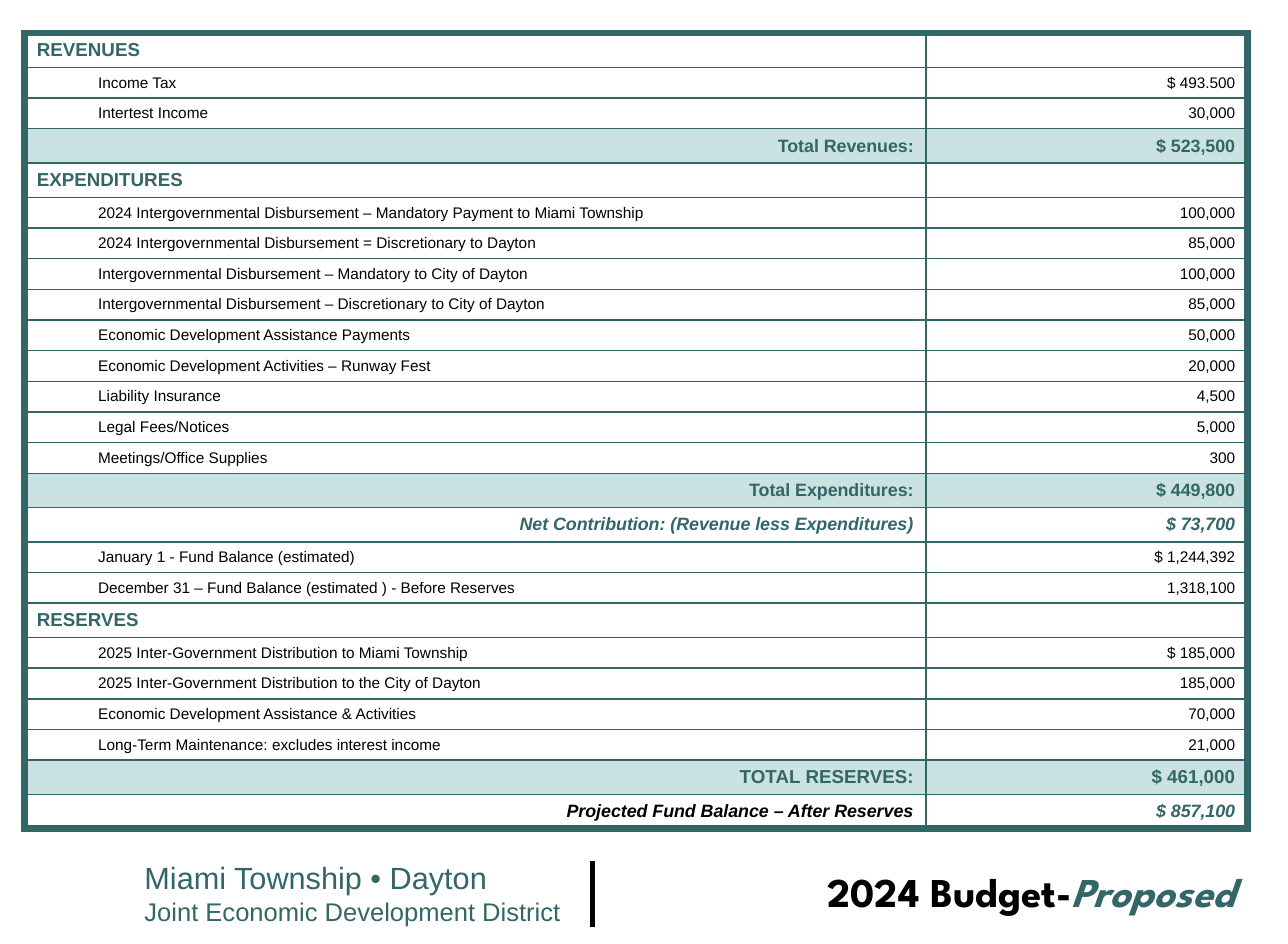
import lxml.etree
import pptx
import pptx.dml.color
import pptx.enum.shapes
import pptx.enum.text
import pptx.oxml.ns
import pptx.util

Inches = pptx.util.Inches
Pt = pptx.util.Pt
qn = pptx.oxml.ns.qn
ALIGN = pptx.enum.text.PP_ALIGN
MIDDLE = pptx.enum.text.MSO_ANCHOR.MIDDLE

TEAL, PALE, BLACK, WHITE = "336666", "CAE2E2", "000000", "FFFFFF"
LEFT, TOP = 0.2, 0.27
COLUMNS = [7.35, 2.62]
TALL, SHORT = 0.28, 0.25
INNER, OUTER = 1, 4.5

# Row kinds: size, label colour, amount colour, fill, bold, italic
KINDS = {
    "heading": (11, TEAL, TEAL, WHITE, True, False),
    "item": (9, BLACK, BLACK, WHITE, False, False),
    "total": (10.5, TEAL, TEAL, PALE, True, False),
    "grand": (11, TEAL, TEAL, PALE, True, False),
    "net": (10.5, TEAL, TEAL, WHITE, True, True),
    "final": (10.5, BLACK, TEAL, WHITE, True, True),
}
ROWS = [
    ("heading", "REVENUES", ""),
    ("item", "Income Tax", "$ 493.500"),
    ("item", "Intertest Income", "30,000"),
    ("total", "Total Revenues:", "$ 523,500"),
    ("heading", "EXPENDITURES", ""),
    ("item", "2024 Intergovernmental Disbursement – Mandatory Payment to Miami Township", "100,000"),
    ("item", "2024 Intergovernmental Disbursement = Discretionary to Dayton", "85,000"),
    ("item", "Intergovernmental Disbursement – Mandatory to City of Dayton", "100,000"),
    ("item", "Intergovernmental Disbursement – Discretionary to City of Dayton", "85,000"),
    ("item", "Economic Development Assistance Payments", "50,000"),
    ("item", "Economic Development Activities – Runway Fest", "20,000"),
    ("item", "Liability Insurance", "4,500"),
    ("item", "Legal Fees/Notices", "5,000"),
    ("item", "Meetings/Office Supplies", "300"),
    ("total", "Total Expenditures:", "$ 449,800"),
    ("net", "Net Contribution: (Revenue less Expenditures)", "$ 73,700"),
    ("item", "January 1 - Fund Balance (estimated)", "$ 1,244,392"),
    ("item", "December 31 – Fund Balance (estimated ) - Before Reserves", "1,318,100"),
    ("heading", "RESERVES", ""),
    ("item", "2025 Inter-Government Distribution to Miami Township", "$ 185,000"),
    ("item", "2025 Inter-Government Distribution to the City of Dayton", "185,000"),
    ("item", "Economic Development Assistance & Activities", "70,000"),
    ("item", "Long-Term Maintenance: excludes interest income", "21,000"),
    ("grand", "TOTAL RESERVES:", "$ 461,000"),
    ("final", "Projected Fund Balance – After Reserves", "$ 857,100"),
]


def color(value):
    return pptx.dml.color.RGBColor.from_string(value)


def set_font(font, name, size, value, bold=False, italic=False):
    font.name, font.size = name, Pt(size)
    font.bold, font.italic = bold, italic
    font.color.rgb = color(value)


# The height is 7.7 inches in whole 1/576 inch steps
deck = pptx.Presentation()
deck.slide_width, deck.slide_height = Inches(10.5), pptx.util.Emu(7040563)
page = deck.slides.add_slide(deck.slide_layouts[6])

# Budget table
heights = [SHORT if kind == "item" else TALL for kind, label, amount in ROWS]
table = page.shapes.add_table(
    len(ROWS), len(COLUMNS), Inches(LEFT), Inches(TOP),
    Inches(sum(COLUMNS)), Inches(sum(heights))).table
table.first_row = table.horz_banding = False
for column, width in zip(table.columns, COLUMNS):
    column.width = Inches(width)

for i, (kind, *texts) in enumerate(ROWS):
    table.rows[i].height = Inches(heights[i])
    size, label_color, amount_color, fill, bold, italic = KINDS[kind]
    for j, text in enumerate(texts):
        cell = table.cell(i, j)
        cell.vertical_anchor = MIDDLE
        cell.margin_top = cell.margin_bottom = Inches(0.02)
        cell.margin_left = Inches(0.6 if kind == "item" and j == 0 else 0.1)
        cell.margin_right = Inches(0.1)

        # Thick frame, thin inner lines
        cell_props = cell._tc.get_or_add_tcPr()
        edges = {"lnL": j == 0, "lnR": j == len(COLUMNS) - 1,
                 "lnT": i == 0, "lnB": i == len(ROWS) - 1}
        for tag, outer in edges.items():
            border = lxml.etree.SubElement(
                cell_props, qn("a:" + tag), w=str(int(Pt(OUTER if outer else INNER))))
            paint = lxml.etree.SubElement(border, qn("a:solidFill"))
            lxml.etree.SubElement(paint, qn("a:srgbClr"), val=TEAL)
        cell.fill.solid()
        cell.fill.fore_color.rgb = color(fill)

        para = cell.text_frame.paragraphs[0]
        on_left = j == 0 and kind in ("heading", "item")
        para.alignment = ALIGN.LEFT if on_left else ALIGN.RIGHT
        set_font(para.font, "Arial", size, amount_color if j else label_color, bold, italic)
        if text:
            para.add_run().text = text
        else:
            # Keeps an empty cell from growing its row
            lxml.etree.SubElement(para._p, qn("a:endParaRPr"), sz=str(size * 100))

# District name
box = page.shapes.add_textbox(Inches(1.08), Inches(6.96), Inches(4), Inches(0.67))
box.text_frame.word_wrap = True
box.text_frame.text = "Miami Township • Dayton\nJoint Economic Development District"
for para, size in zip(box.text_frame.paragraphs, (18, 15)):
    set_font(para.font, "Arial", size, TEAL)

# Divider
divider = page.shapes.add_connector(
    pptx.enum.shapes.MSO_CONNECTOR.STRAIGHT,
    Inches(4.83), Inches(7.02), Inches(4.83), Inches(7.56))
divider.line.color.rgb = color(BLACK)
divider.line.width = Pt(3)
lxml.etree.SubElement(divider._element.spPr, qn("a:effectLst"))

# Slide title
box = page.shapes.add_textbox(Inches(6.28), Inches(7.02), Inches(3.89), Inches(0.5))
box.text_frame.word_wrap = False
para = box.text_frame.paragraphs[0]
para.alignment = ALIGN.RIGHT
for text, value, italic in (("2024 Budget-", BLACK, False), ("Proposed", TEAL, True)):
    span = para.add_run()
    span.text = text
    set_font(span.font, "League Spartan", 24, value, True, italic)

deck.save("out.pptx")
